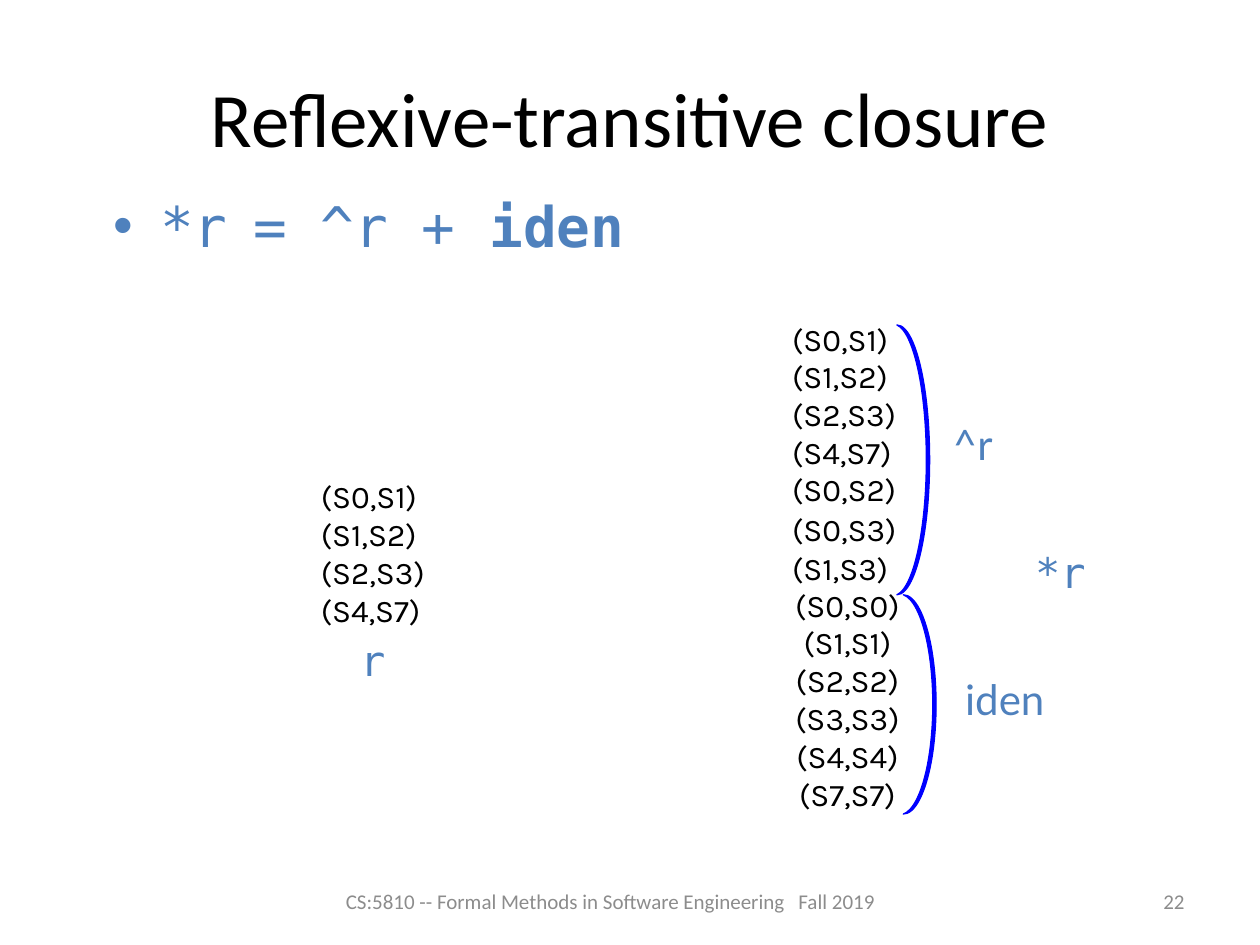
from pptx import Presentation
from pptx.dml.color import RGBColor
from pptx.enum.shapes import MSO_SHAPE as Shape
from pptx.enum.text import MSO_ANCHOR as Anchor, PP_ALIGN as Align
from pptx.oxml.ns import qn
from pptx.util import Cm, Pt
from lxml.etree import SubElement

COLORS = {"black": "000000", "accent": "4F81BD", "grey": "8C8C8C", "brace": "0000FF"}
MONO = "DejaVu Sans Mono"

# Content: pairs of each relation
RELATION = ["(S0,S1)", "(S1,S2)", "(S2,S3)", "(S4,S7)"]
DERIVED = ["(S0,S2)", "(S0,S3)", "(S1,S3)"]
IDENTITY = [f"(S{n},S{n})" for n in (0, 1, 2, 3, 4, 7)]
FORMULA = [("*r", MONO, False), ("  ", "Calibri", False),
           ("= ^r + ", MONO, False), ("iden", MONO, True)]

# Pair lists: lines, left, top, height, alignment
PAIR_WIDTH = 2.67
PAIR_LISTS = [
    (RELATION, 6.22, 9.5, 3.3, Align.LEFT),
    (RELATION, 15.72, 6.32, 3.3, Align.LEFT),
    *[([pair], 15.72, top, 1.02, Align.LEFT)
      for pair, top in zip(DERIVED, (9.35, 10.16, 10.95))],
    (IDENTITY, 15.75, 11.68, 4.83, Align.CENTER),
]
# Relation names: text, left, top, width, font, alignment
LABELS = [
    ("r", 7.01, 12.67, 1.02, MONO, Align.LEFT),
    ("*r", 20.62, 10.9, 1.52, MONO, Align.LEFT),
    ("^r", 18.9, 8.31, 1.42, "Lato", Align.CENTER),
    ("iden", 19.2, 13.46, 2.11, "Lato", Align.CENTER),
]
# Braces: left, top, height
BRACES = [(18.08, 6.55, 5.44), (18.21, 11.99, 4.42)]
# Footer: text, left, width, alignment
FOOTER = [
    ("CS:5810 -- Formal Methods in Software Engineering   Fall 2019",
     5.59, 13.44, Align.CENTER),
    ("22", 20.07, 4.06, Align.RIGHT),
]

deck = Presentation()
deck.slide_width, deck.slide_height = Cm(25.4), Cm(19.05)
page = deck.slides.add_slide(deck.slide_layouts[6])


def color(name):
    return RGBColor.from_string(COLORS[name])


def add_text(lines, left, top, width, height, size, font, ink,
             align=Align.LEFT, anchor=Anchor.TOP, wrap=True):
    box = page.shapes.add_textbox(Cm(left), Cm(top), Cm(width), Cm(height))
    frame = box.text_frame
    frame.word_wrap = wrap
    frame.vertical_anchor = anchor
    frame.text = "\n".join(lines)
    for para in frame.paragraphs:
        para.alignment = align
        para.font.size = Pt(size)
        para.font.name = font
        para.font.color.rgb = color(ink)
    return frame


# Title
add_text(["Reflexive-transitive closure"], 1.27, 0.76, 22.86, 3.18,
         44, "Calibri", "black", Align.CENTER, Anchor.MIDDLE)

# Bulleted formula
para = add_text([""], 2.03, 3.73, 22.23, 13.92, 32, MONO, "accent").paragraphs[0]
para.space_before = Pt(6.4)
for text, font, bold in FORMULA:
    span = para.add_run()
    span.text = text
    span.font.name = font
    span.font.size = Pt(32)
    span.font.bold = bold
    span.font.color.rgb = color("accent")
props = para._p.get_or_add_pPr()
props.set("marL", str(Cm(0.95)))
props.set("indent", str(-Cm(0.95)))
bullet_font = SubElement(props, qn("a:buFont"))
bullet_font.set("typeface", "Arial")
bullet = SubElement(props, qn("a:buChar"))
bullet.set("char", "•")
# Bullet elements come before the default run properties
props.append(props.find(qn("a:defRPr")))

# Pair lists and relation names
for lines, left, top, height, align in PAIR_LISTS:
    add_text(lines, left, top, PAIR_WIDTH, height, 18, "Karla", "black",
             align, wrap=False)
for text, left, top, width, font, align in LABELS:
    add_text([text], left, top, width, 1.27, 24, font, "accent", align, wrap=False)

# Braces
for left, top, height in BRACES:
    brace = page.shapes.add_shape(Shape.MOON, Cm(left), Cm(top), Cm(0.66), Cm(height))
    brace.rotation = 180
    brace.adjustments[0] = 0.1
    brace.shadow.inherit = False
    brace.fill.solid()
    brace.fill.fore_color.rgb = color("brace")
    brace.line.color.rgb = color("brace")
    brace.line.width = Pt(0.75)

# Footer
for text, left, width, align in FOOTER:
    add_text([text], left, 17.65, width, 1.02, 12, "Calibri", "grey",
             align, Anchor.MIDDLE)

deck.save("out.pptx")
